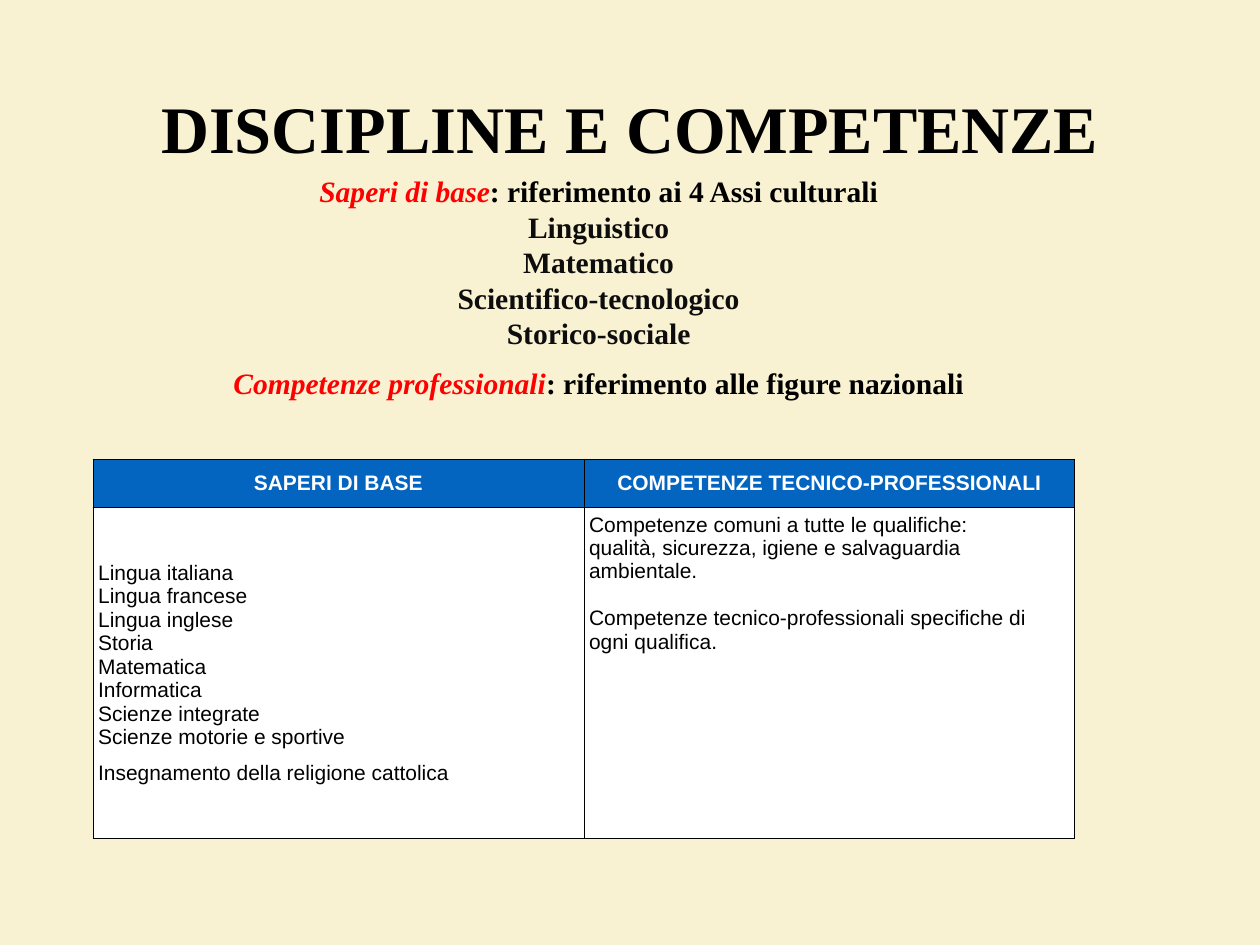
from pptx import Presentation
from pptx.dml.color import RGBColor as Rgb
from pptx.enum.text import MSO_ANCHOR as Anchor, MSO_AUTO_SIZE as Auto, PP_ALIGN as Align
from pptx.oxml.ns import qn
from pptx.util import Pt
from lxml.etree import SubElement as Sub

HUES = {"cream": "F8F2D3", "black": "000000", "ink": "0D0D0D",
        "red": "FF0000", "blue": "0365C0", "white": "FFFFFF"}
SERIF, SANS = "Times New Roman", "Arial"
INSET = 4.3


class Deck:
    def __init__(self, wide, high):
        self.show = Presentation()
        self.show.slide_width, self.show.slide_height = Pt(wide), Pt(high)
        self.slide = self.show.slides.add_slide(self.show.slide_layouts[6])
        self.paint(self.slide.background.fill, "cream")

    def paint(self, fill, hue):
        fill.solid()
        fill.fore_color.rgb = Rgb.from_string(HUES[hue])

    def style(self, run, face, size, hue, bold=False, slant=False):
        font = run.font
        font.name, font.size = face, Pt(size)
        font.bold, font.italic = bold, slant
        font.color.rgb = Rgb.from_string(HUES[hue])

    def inset(self, item):
        item.margin_left = item.margin_right = Pt(INSET)
        item.margin_top = item.margin_bottom = Pt(INSET)

    def box(self, x, y, wide, high, lines, size, grow=False):
        shape = self.slide.shapes.add_textbox(Pt(x), Pt(y), Pt(wide), Pt(high))
        frame = shape.text_frame
        frame.word_wrap = True
        frame.auto_size = Auto.SHAPE_TO_FIT_TEXT if grow else Auto.NONE
        frame.vertical_anchor = Anchor.MIDDLE
        self.inset(frame)
        frame.text = "\n".join(lead for lead, rest, hue in lines)
        for para, (lead, rest, hue) in zip(frame.paragraphs, lines):
            para.alignment = Align.CENTER
            self.style(para.runs[0], SERIF, size, hue, True, bool(rest))
            if rest:
                tail = para.add_run()
                tail.text = rest
                self.style(tail, SERIF, size, "black", True)
        return frame

    def edge(self, cell):
        props = cell._tc.get_or_add_tcPr()
        for side in ("a:lnL", "a:lnR", "a:lnT", "a:lnB"):
            line = Sub(props, qn(side), w=str(Pt(0.5)))
            Sub(Sub(line, qn("a:solidFill")), qn("a:srgbClr"), val=HUES["black"])

    def cell(self, cell, text, head, anchor):
        self.inset(cell)
        self.edge(cell)
        self.paint(cell.fill, "blue" if head else "white")
        cell.vertical_anchor = anchor
        cell.text_frame.text = text
        for para in cell.text_frame.paragraphs:
            para.alignment = Align.CENTER if head else Align.LEFT
            for run in para.runs:
                self.style(run, SANS, 17, "white" if head else "black", head)

    def table(self, x, y, cols, rows, texts):
        frame = self.slide.shapes.add_table(
            len(rows), len(cols), Pt(x), Pt(y), Pt(sum(cols)), Pt(sum(rows)))
        grid = frame.table
        for col, wide in zip(grid.columns, cols):
            col.width = Pt(wide)
        for r, high in enumerate(rows):
            grid.rows[r].height = Pt(high)
            for c, text in enumerate(texts[r]):
                anchor = Anchor.TOP if r and c else Anchor.MIDDLE
                self.cell(grid.cell(r, c), text, r == 0, anchor)
        return grid

    def save(self):
        self.show.save("out.pptx")


BASE = ["Lingua italiana", "Lingua francese", "Lingua inglese", "Storia",
        "Matematica", "Informatica", "Scienze integrate",
        "Scienze motorie e sportive", "Insegnamento della religione cattolica"]
SKILLS = ["Competenze comuni a tutte le qualifiche:",
          "qualità, sicurezza, igiene e salvaguardia ambientale.",
          "Competenze tecnico-professionali specifiche di ogni qualifica."]
AXES = ["Linguistico", "Matematico", "Scientifico-tecnologico", "Storico-sociale"]


def main():
    deck = Deck(1024, 768)
    deck.box(75, 52, 874, 102, [("DISCIPLINE E COMPETENZE", "", "black")], 54)
    grid = deck.table(75.5, 373, [399, 399], [39.6, 268.6], [
        ["SAPERI DI BASE", "COMPETENZE TECNICO-PROFESSIONALI"],
        ["\n".join(BASE), "\n".join(SKILLS)]])
    grid.cell(1, 0).text_frame.paragraphs[-1].line_spacing = 1.5
    grid.cell(1, 1).text_frame.paragraphs[-1].space_before = Pt(19)
    intro = deck.box(81, 136, 811, 194.4, [
        ("Saperi di base", ": riferimento ai 4 Assi culturali", "red"),
        *((axis, "", "ink") for axis in AXES),
        ("Competenze professionali", ": riferimento alle figure nazionali", "red"),
    ], 24, grow=True)
    intro.paragraphs[-1].space_before = Pt(12)
    deck.save()


if __name__ == "__main__":
    main()
